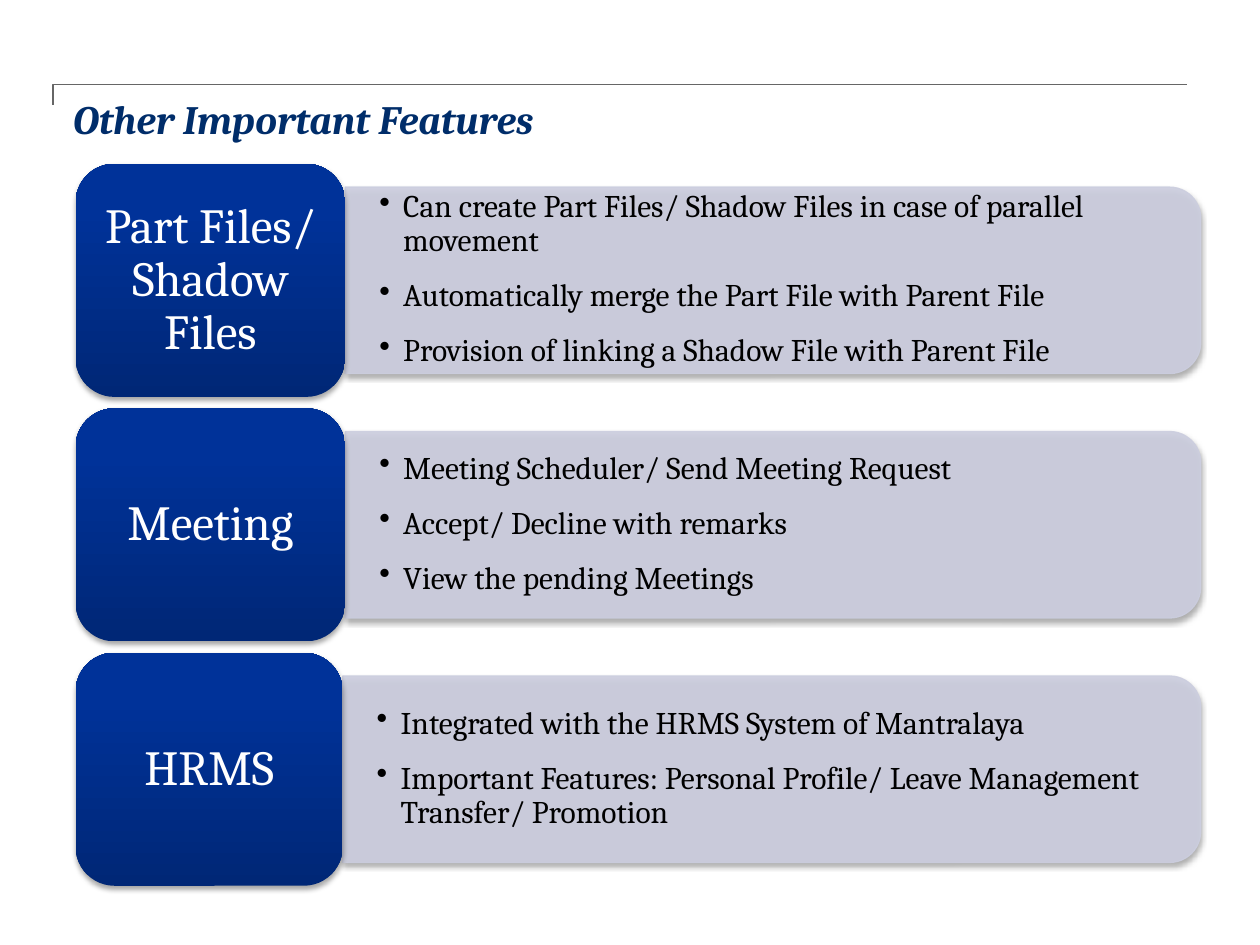
from lxml.etree import SubElement
from pptx import Presentation
from pptx.dml.color import RGBColor
from pptx.enum.shapes import MSO_SHAPE
from pptx.enum.text import MSO_ANCHOR, PP_ALIGN
from pptx.oxml.ns import qn
from pptx.util import Inches, Pt

FONT = "Cambria"
NAVY = RGBColor(0x00, 0x2D, 0x6A)
TILE_DARK = RGBColor(0x00, 0x27, 0x76)
TILE_BLUE = RGBColor(0x00, 0x32, 0x99)
PANEL = RGBColor(0xCC, 0xCE, 0xDF)
RULE = RGBColor(0x66, 0x66, 0x66)
BLACK = RGBColor(0, 0, 0)
WHITE = RGBColor(0xFF, 0xFF, 0xFF)

LEFT, RIGHT, TOP = 0.6, 9.53, 1.3
TILE_H, PANEL_H, PITCH = 1.85, 1.48, 1.94

FEATURES = [
    ("Part Files/ Shadow Files", 2.14, [
        "Can create Part Files/ Shadow Files in case of parallel movement",
        "Automatically merge the Part File with Parent File",
        "Provision of linking a Shadow File with Parent File"]),
    ("Meeting", 2.14, [
        "Meeting Scheduler/ Send Meeting Request",
        "Accept/ Decline with remarks",
        "View the pending Meetings"]),
    ("HRMS", 2.12, [
        "Integrated with the HRMS System of Mantralaya",
        "Important Features: Personal Profile/ Leave Management "
        "Transfer/ Promotion"]),
]


def set_frame(tf, x_inset, y_inset, anchor):
    """Set wrapping, insets and anchor of a text frame."""
    tf.word_wrap = True
    tf.margin_left = tf.margin_right = Inches(x_inset)
    tf.margin_top = tf.margin_bottom = Inches(y_inset)
    tf.vertical_anchor = anchor


def style_text(p, size, color):
    """Format the runs of a paragraph."""
    for r in p.runs:
        r.font.name = FONT
        r.font.size = Pt(size)
        r.font.color.rgb = color


def add_shadow(sp):
    """Give a shape a soft shadow that falls downwards."""
    sp.shadow.inherit = False
    effects = sp._element.spPr.find(qn("a:effectLst"))
    shadow = SubElement(effects, qn("a:outerShdw"), blurRad=str(Pt(3.1)),
                        dist=str(Pt(1.8)), dir="5400000", rotWithShape="0")
    color = SubElement(shadow, qn("a:srgbClr"), val="000000")
    SubElement(color, qn("a:alpha"), val="35000")


def add_rule(s):
    """Draw the thin angled rule above the title."""
    builder = s.shapes.build_freeform(Inches(0.42), Inches(0.83))
    builder.add_line_segments([(Inches(0.42), Inches(0.67)),
                               (Inches(9.42), Inches(0.67))], close=False)
    sp = builder.convert_to_shape()
    sp.fill.background()
    sp.line.color.rgb = RULE
    sp.line.width = Pt(1)
    sp.shadow.inherit = False


def add_title(s, text):
    """Add the slide title."""
    box = s.shapes.add_textbox(Inches(0.58), Inches(0.75), Inches(8.83), Inches(0.42))
    tf = box.text_frame
    set_frame(tf, 0, 0, MSO_ANCHOR.TOP)
    tf.text = text
    p = tf.paragraphs[0]
    style_text(p, 23, NAVY)
    p.runs[0].font.bold = p.runs[0].font.italic = True


def add_panel(s, left, middle):
    """Add a panel, rounded on its right side, centred on a height."""
    length = RIGHT - left
    sp = s.shapes.add_shape(
        MSO_SHAPE.ROUND_2_SAME_RECTANGLE,
        Inches((left + RIGHT - PANEL_H) / 2), Inches(middle - length / 2),
        Inches(PANEL_H), Inches(length))
    sp.rotation = 90
    sp.fill.solid()
    sp.fill.fore_color.rgb = PANEL
    sp.line.color.rgb = PANEL
    sp.line.width = Pt(0.75)
    for color in list(sp._element.spPr.iter(qn("a:srgbClr"))):
        SubElement(color, qn("a:alpha"), val="90000")
    add_shadow(sp)


def add_bullets(s, left, middle, items):
    """Add the bulleted text that lies on a panel."""
    box = s.shapes.add_textbox(Inches(left), Inches(middle - 0.67),
                               Inches(RIGHT - 0.07 - left), Inches(1.33))
    tf = box.text_frame
    set_frame(tf, 0.27, 0.14, MSO_ANCHOR.MIDDLE)
    tf.text = "\n".join(items)
    for p in tf.paragraphs:
        p.level = 1
        p.line_spacing = 0.9
        p.space_after = Pt(12)
        pPr = p._p.get_or_add_pPr()
        pPr.set("marL", str(Inches(0.19)))
        pPr.set("indent", str(-Inches(0.19)))
        SubElement(pPr, qn("a:buChar"), char="•")
        style_text(p, 18, BLACK)


def add_tile(s, top, width, text):
    """Add a rounded gradient tile with its heading."""
    sp = s.shapes.add_shape(MSO_SHAPE.ROUNDED_RECTANGLE, Inches(LEFT),
                            Inches(top), Inches(width), Inches(TILE_H))
    sp.fill.gradient()
    sp.fill.gradient_angle = 90
    for stop, position, color in zip(sp.fill.gradient_stops, (0, 0.8),
                                     (TILE_DARK, TILE_BLUE)):
        stop.position = position
        stop.color.rgb = color
    sp.line.fill.background()
    add_shadow(sp)
    tf = sp.text_frame
    set_frame(tf, 0.12, 0.06, MSO_ANCHOR.MIDDLE)
    tf.text = text
    p = tf.paragraphs[0]
    p.alignment = PP_ALIGN.CENTER
    p.line_spacing = 0.9
    style_text(p, 28, WHITE)


def main():
    """Build the slide and save it."""
    prs = Presentation()
    prs.slide_width, prs.slide_height = Inches(10), Inches(7.5)
    s = prs.slides.add_slide(prs.slide_layouts[6])
    add_rule(s)
    add_title(s, "Other Important Features")
    for i, (heading, width, items) in enumerate(FEATURES):
        top = TOP + i * PITCH
        middle = top + TILE_H / 2
        add_panel(s, LEFT + width, middle)
        add_bullets(s, LEFT + width, middle, items)
        add_tile(s, top, width, heading)
    prs.save("out.pptx")


if __name__ == "__main__":
    main()
